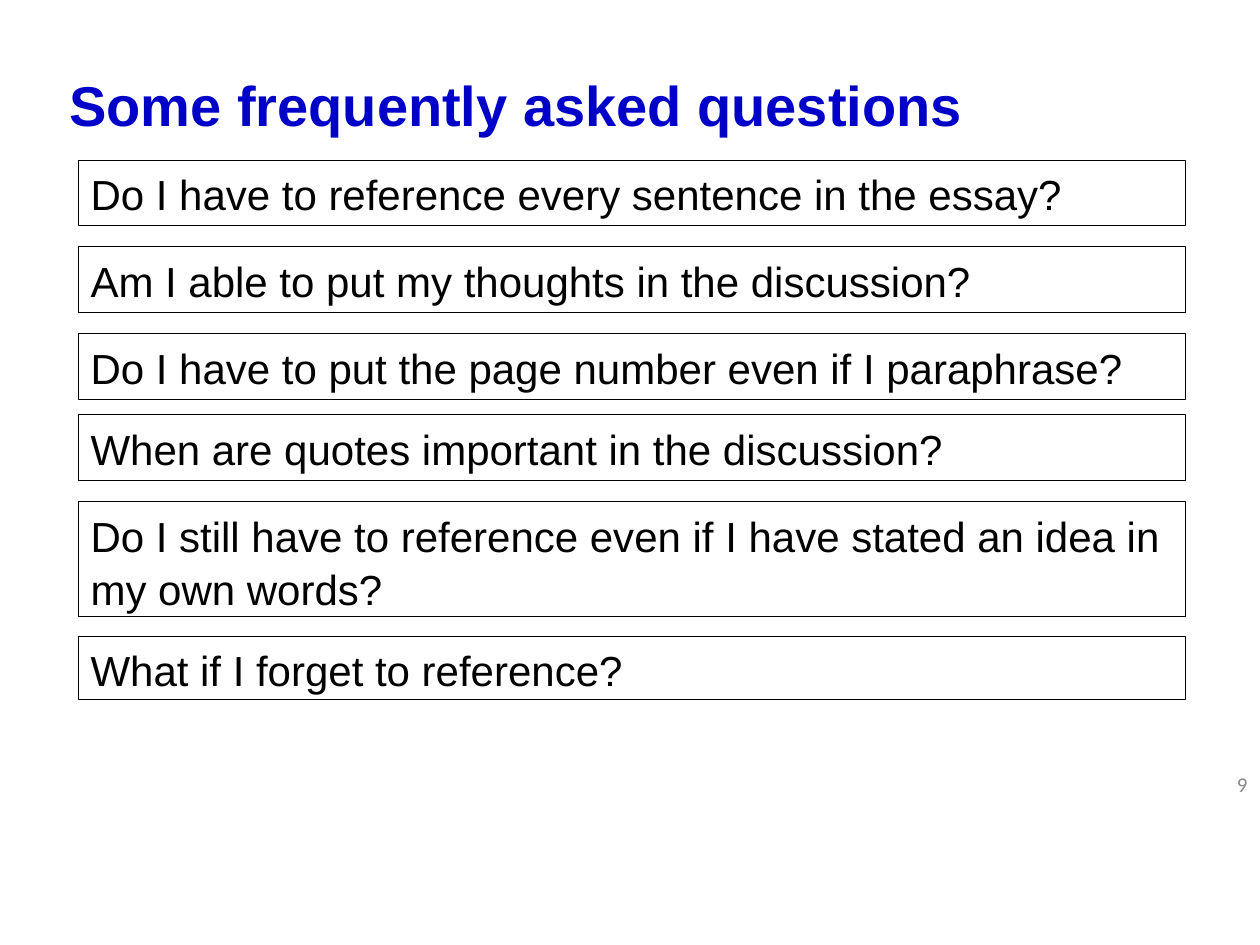
from pptx import Presentation
from pptx.dml.color import RGBColor
from pptx.enum.shapes import MSO_SHAPE
from pptx.enum.text import MSO_ANCHOR, MSO_AUTO_SIZE, PP_ALIGN
from pptx.util import Inches, Pt

RECTANGLE = MSO_SHAPE.RECTANGLE
TOP, MIDDLE = MSO_ANCHOR.TOP, MSO_ANCHOR.MIDDLE
LEFT, RIGHT = PP_ALIGN.LEFT, PP_ALIGN.RIGHT
GROW = MSO_AUTO_SIZE.SHAPE_TO_FIT_TEXT

TITLE = "Some frequently asked questions"
PAGE_NUMBER = "9"
# Question, box height, gap below (inches)
QUESTIONS = [
    ("Do I have to reference every sentence in the essay?", 0.52, 0.17),
    ("Am I able to put my thoughts in the discussion?", 0.52, 0.17),
    ("Do I have to put the page number even if I paraphrase?", 0.52, 0.12),
    ("When are quotes important in the discussion?", 0.52, 0.17),
    ("Do I still have to reference even if I have stated an idea in my own words?", 0.91, 0.16),
    ("What if I forget to reference?", 0.5, 0),
]

SLIDE_WIDTH, SLIDE_HEIGHT = 10, 7.5
TITLE_AREA = (0.45, 0.47, 9.03, 0.71)
NUMBER_AREA = (7.67, 6.02, 2.33, 0.4)
LIST_LEFT, LIST_TOP, LIST_WIDTH = 0.62, 1.27, 8.79

BLACK = RGBColor(0, 0, 0)
THEME = {
    "title": {
        "font": {"name": "Arial", "size": Pt(32), "bold": True},
        "color": RGBColor(0x00, 0x00, 0xC8),
        "frame": {"word_wrap": True, "vertical_anchor": MIDDLE},
        "paragraph": {"alignment": LEFT},
    },
    "question": {
        "font": {"name": "Arial", "size": Pt(24)},
        "color": BLACK,
        "frame": {"word_wrap": True, "vertical_anchor": TOP, "auto_size": GROW},
        "paragraph": {"alignment": LEFT, "line_spacing": 1.05},
    },
    "number": {
        "font": {"name": "Calibri", "size": Pt(12)},
        "color": RGBColor(0x89, 0x89, 0x89),
        "frame": {"word_wrap": True, "vertical_anchor": MIDDLE},
        "paragraph": {"alignment": RIGHT},
    },
    "border": {"color": BLACK, "width": Pt(0.5)},
}


def apply_format(target, values):
    for attribute, value in values.items():
        setattr(target, attribute, value)


def write(shape, text, style):
    frame = shape.text_frame
    paragraph = frame.paragraphs[0]
    paragraph.text = text
    apply_format(frame, style["frame"])
    apply_format(paragraph, style["paragraph"])
    font = paragraph.runs[0].font
    apply_format(font, style["font"])
    font.color.rgb = style["color"]


def add_label(slide, area, text, style):
    write(slide.shapes.add_textbox(*map(Inches, area)), text, style)


def add_question(slide, area, text):
    question = slide.shapes.add_shape(RECTANGLE, *map(Inches, area))
    question.shadow.inherit = False
    question.fill.background()
    question.line.color.rgb = THEME["border"]["color"]
    question.line.width = THEME["border"]["width"]
    write(question, text, THEME["question"])


def main():
    deck = Presentation()
    deck.slide_width, deck.slide_height = Inches(SLIDE_WIDTH), Inches(SLIDE_HEIGHT)
    slide = deck.slides.add_slide(deck.slide_layouts[6])

    add_label(slide, TITLE_AREA, TITLE, THEME["title"])
    add_label(slide, NUMBER_AREA, PAGE_NUMBER, THEME["number"])

    top = LIST_TOP
    for text, height, gap in QUESTIONS:
        add_question(slide, (LIST_LEFT, top, LIST_WIDTH, height), text)
        top += height + gap

    deck.save("out.pptx")


if __name__ == "__main__":
    main()
